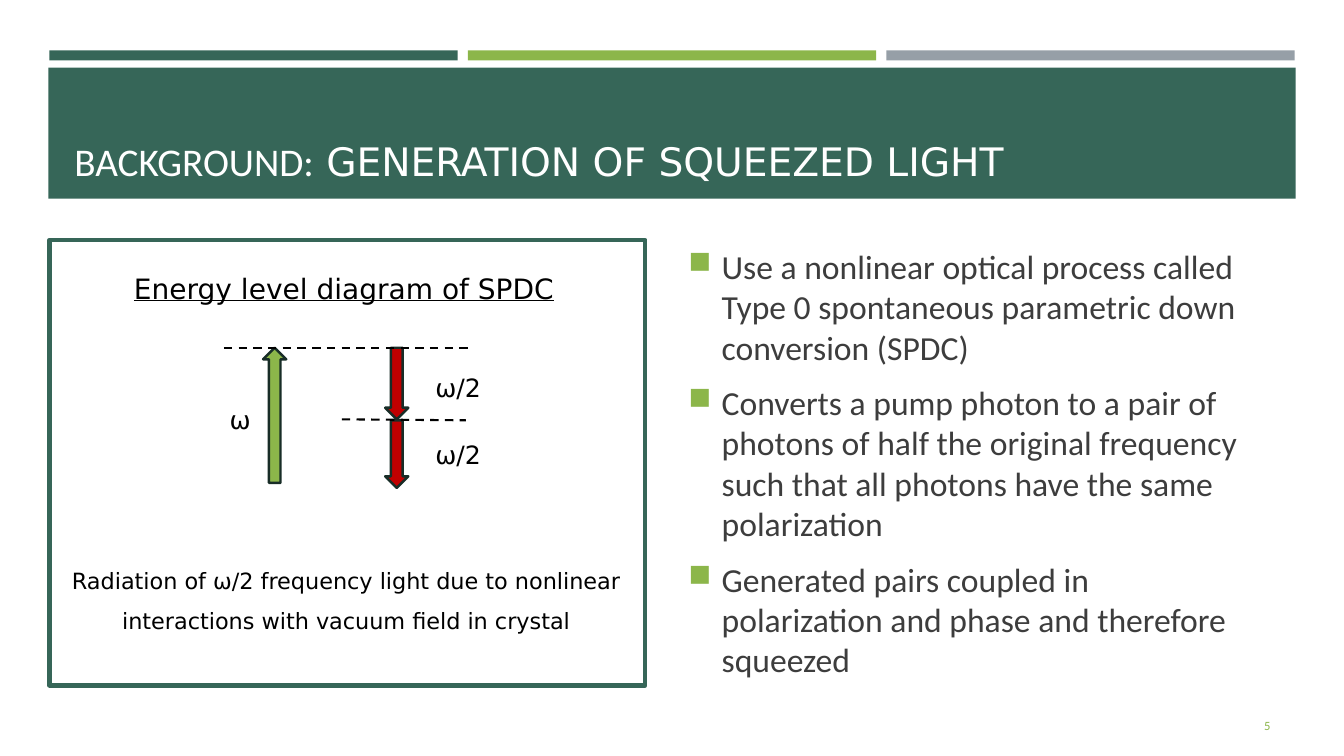
from lxml import etree
from pptx import Presentation
from pptx.dml.color import RGBColor
from pptx.enum.dml import MSO_LINE
from pptx.enum.shapes import MSO_CONNECTOR, MSO_SHAPE
from pptx.enum.text import MSO_ANCHOR, PP_ALIGN
from pptx.oxml.ns import qn
from pptx.util import Emu, Inches, Pt

RECT, ARROW = MSO_SHAPE.RECTANGLE, MSO_SHAPE.UP_ARROW
TOP, MIDDLE, BOTTOM = MSO_ANCHOR.TOP, MSO_ANCHOR.MIDDLE, MSO_ANCHOR.BOTTOM
LEFT, CENTER, RIGHT = PP_ALIGN.LEFT, PP_ALIGN.CENTER, PP_ALIGN.RIGHT

# Content
PINE, LEAF, SLATE, RED = "366658", "8CB64A", "969FA7", "C00000"
EDGE, BODY, BLACK, WHITE = "182D27", "3D3D3D", "000000", "FFFFFF"
SANS, DEJAVU = "Calibri", "DejaVu Sans"

TITLE = [("BACKGROUND:", SANS), (" GENERATION OF SQUEEZED LIGHT", DEJAVU)]
BULLETS = [
    "Use a nonlinear optical process called Type 0 spontaneous parametric "
    "down conversion (SPDC)",
    "Converts a pump photon to a pair of photons of half the original "
    "frequency such that all photons have the same polarization",
    "Generated pairs coupled in polarization and phase and therefore squeezed",
]
DIAGRAM_TITLE = "Energy level diagram of SPDC"
CAPTION = ("Radiation of ω/2 frequency light due to nonlinear interactions "
           "with vacuum field in crystal")
PAGE = "5"

# Layout in inches
WIDTH, HEIGHT = 13.33, 7.5
MARGIN, BAR_W, BAR_GAP = 0.49, 4.05, 0.1
PANEL_TOP, PANEL_H = 2.38, 4.42
LEVEL_TOP, LEVEL_MID = 3.45, 4.17
PUMP_X, PAIR_X, ARROW_W = 2.61, 3.82, 0.23

# (left, top, height, rotation, fill)
ARROWS = [
    (PUMP_X, LEVEL_TOP, 1.34, 0, LEAF),
    (PAIR_X, LEVEL_MID, 0.67, 180, RED),
    (PAIR_X, LEVEL_TOP, 0.71, 180, RED),
]
# (start x, start y, end x, end y)
LEVELS = [
    (2.22, LEVEL_TOP, 4.67, LEVEL_TOP),
    (3.39, 4.16, 4.62, LEVEL_MID),
]
# (text, left, top, width)
FREQUENCIES = [("ω", 2.18, 3.96, 0.41), ("ω/2", 4.22, 3.64, 0.68),
               ("ω/2", 4.22, 4.31, 0.68)]

prs = Presentation()
prs.slide_width, prs.slide_height = Inches(WIDTH), Inches(HEIGHT)
slide = prs.slides.add_slide(prs.slide_layouts[6])


def color(value):
    return RGBColor.from_string(value)


def apply(target, values):
    for name, value in values.items():
        setattr(target, name, value)


def add_block(kind, box, fill, line=None, weight=0, rotation=0):
    block = slide.shapes.add_shape(kind, *map(Inches, box))
    block.shadow.inherit = False
    block.rotation = rotation
    block.fill.solid()
    block.fill.fore_color.rgb = color(fill)
    if line:
        block.line.color.rgb = color(line)
        block.line.width = Pt(weight)
    else:
        block.line.fill.background()


def add_text(box, paragraphs, size, ink, anchor=TOP, wrap=True,
             underline=None, **paragraph_format):
    """Each paragraph is a list of (text, font name) runs."""
    frame = slide.shapes.add_textbox(*map(Inches, box)).text_frame
    apply(frame, {"word_wrap": wrap, "vertical_anchor": anchor})
    for i, runs in enumerate(paragraphs):
        paragraph = frame.paragraphs[0] if i == 0 else frame.add_paragraph()
        apply(paragraph, paragraph_format)
        for text, face in runs:
            run = paragraph.add_run()
            run.text = text
            apply(run.font, {"name": face, "size": Pt(size), "underline": underline})
            run.font.color.rgb = color(ink)
    return frame


def add_bullet(paragraph, indent):
    props = paragraph._p.get_or_add_pPr()
    props.set("marL", str(Inches(indent)))
    props.set("indent", str(-Inches(indent)))
    tint = etree.SubElement(props, qn("a:buClr"))
    etree.SubElement(tint, qn("a:srgbClr"), val=LEAF)
    etree.SubElement(props, qn("a:buSzPct"), val="92000")
    etree.SubElement(props, qn("a:buChar"), char="■")


def add_level(x1, y1, x2, y2):
    level = slide.shapes.add_connector(
        MSO_CONNECTOR.STRAIGHT, *map(Inches, (x1, y1, x2, y2)))
    apply(level.line, {"width": Pt(1.5), "dash_style": MSO_LINE.DASH})
    level.line.color.rgb = color(BLACK)
    etree.SubElement(level._element.spPr, qn("a:effectLst"))


# Header bars and title band
for column, fill in enumerate((PINE, LEAF, SLATE)):
    add_block(RECT, (MARGIN + column * (BAR_W + BAR_GAP), 0.5, BAR_W, 0.1), fill)
add_block(RECT, (0.48, 0.67, 12.37, 1.3), PINE)
add_text((0.64, 0.77, 12.06, 1.11), [TITLE], 28, WHITE, BOTTOM)

# Diagram panel
add_block(RECT, (MARGIN, PANEL_TOP, 5.91, PANEL_H), WHITE, PINE, 3)

# Bullet list
bullet_list = add_text(
    (6.73, PANEL_TOP, 5.77, PANEL_H), [[(text, SANS)] for text in BULLETS],
    24, BODY, MIDDLE, space_before=Pt(4.8), space_after=Pt(6))
for item in bullet_list.paragraphs:
    add_bullet(item, 0.33)

# Page number
add_text((11.55, 7, 1.15, 0.4), [[(PAGE, SANS)]], 9, LEAF, MIDDLE,
         alignment=RIGHT, space_after=Pt(6))

# Energy levels and photons
for left, top, height, rotation, fill in ARROWS:
    add_block(ARROW, (left, top, ARROW_W, height), fill, EDGE, 1.75, rotation)
for ends in LEVELS:
    add_level(*ends)
for text, left, top, width in FREQUENCIES:
    add_text((left, top, width, 0.4), [[(text, DEJAVU)]], 18, BLACK,
             wrap=False, alignment=LEFT)

# Diagram heading and caption
add_text((1.23, 2.64, 4.42, 0.44), [[(DIAGRAM_TITLE, DEJAVU)]], 20, BLACK,
         wrap=False, underline=True)
add_text((0.58, 5.44, 5.71, 0.85), [[(CAPTION, DEJAVU)]], 16, BLACK,
         alignment=CENTER, line_spacing=1.5)

prs.save("out.pptx")
